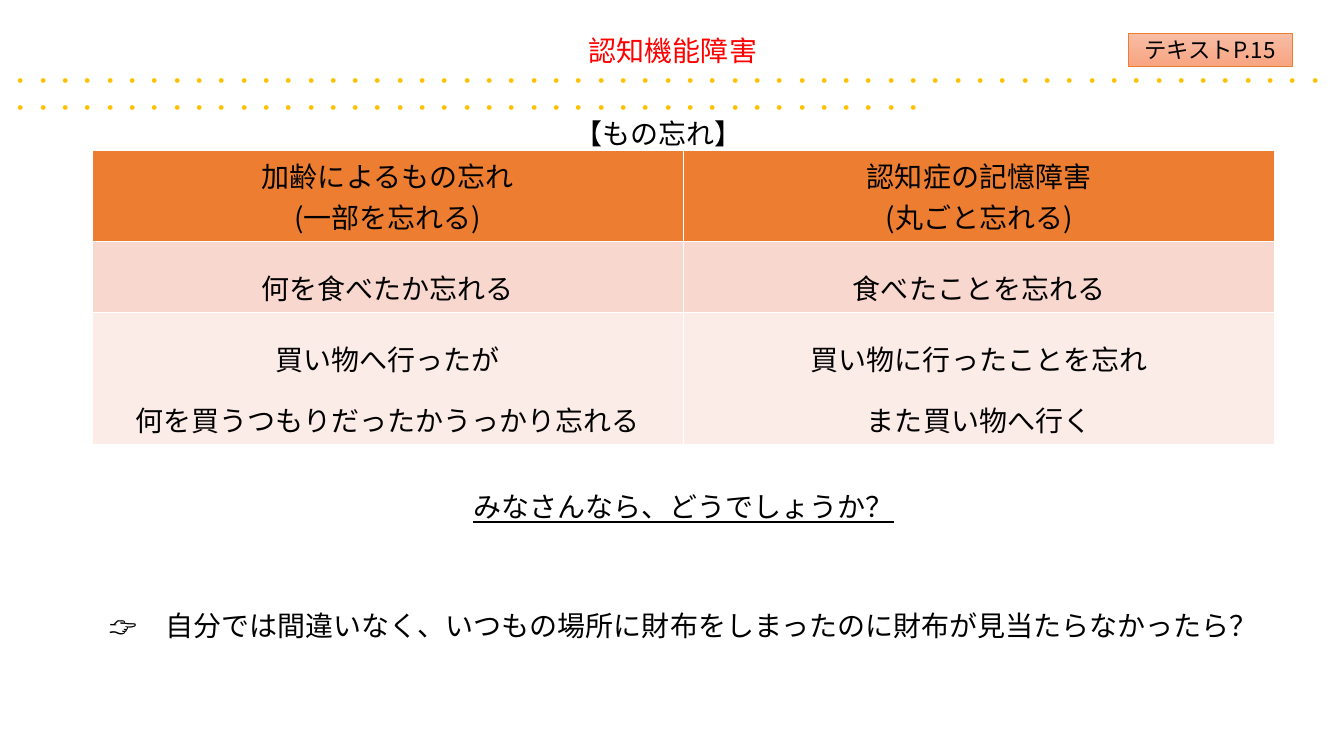
from lxml.etree import SubElement
from pptx import Presentation
from pptx.dml.color import RGBColor
from pptx.enum.shapes import MSO_SHAPE
from pptx.enum.text import MSO_ANCHOR, MSO_AUTO_SIZE, PP_ALIGN
from pptx.oxml.ns import qn
from pptx.util import Emu, Pt

PX_PER_INCH = 100.8
FONT = "Noto Sans CJK JP"
BLACK = RGBColor(0x00, 0x00, 0x00)
RED = RGBColor(0xFF, 0x00, 0x00)
GOLD = RGBColor(0xFF, 0xC0, 0x00)
ORANGE = RGBColor(0xED, 0x7D, 0x31)
PEACH = RGBColor(0xF8, 0xD7, 0xCE)
PALE = RGBColor(0xFC, 0xEC, 0xE8)
BADGE_TOP = RGBColor(0xF7, 0xBD, 0xA5)
BADGE_BOTTOM = RGBColor(0xF8, 0xA5, 0x82)

# fill, line spacing, row height, lines of the left and right cells
ROWS = [
    (ORANGE, 1.0, 91, (["加齢によるもの忘れ", "(一部を忘れる)"],
                       ["認知症の記憶障害", "(丸ごと忘れる)"])),
    (PEACH, 1.5, 71, (["何を食べたか忘れる"], ["食べたことを忘れる"])),
    (PALE, 1.5, 131, (["買い物へ行ったが", "何を買うつもりだったかうっかり忘れる"],
                      ["買い物に行ったことを忘れ", "また買い物へ行く"])),
]


def px(n):
    return Emu(round(n * 914400 / PX_PER_INCH))


def box_px(*box):
    return [px(n) for n in box]


def fill_text(tf, lines, size=20, color=BLACK, align=PP_ALIGN.CENTER, spacing=1.0):
    """Write one paragraph per line and return the paragraphs."""
    tf.word_wrap = True
    for i, line in enumerate(lines):
        p = tf.paragraphs[0] if i == 0 else tf.add_paragraph()
        p.text = line
        p.alignment = align
        p.line_spacing = spacing
        p.space_before = Pt(0)
        p.font.size = Pt(size)
        p.font.bold = False
        p.font.color.rgb = color
        p.font.name = FONT
        SubElement(p._p.pPr.find(qn("a:defRPr")), qn("a:ea"), typeface=FONT)
    return tf.paragraphs


def clear_margins(tf):
    tf.margin_left = tf.margin_top = tf.margin_right = tf.margin_bottom = 0


def add_text(slide, box, lines, **style):
    tf = slide.shapes.add_textbox(*box_px(*box)).text_frame
    clear_margins(tf)
    return fill_text(tf, lines, **style)


def add_header(slide, left, top, width):
    title = slide.shapes.title
    title.left, title.top, title.width, title.height = box_px(left, top, width, 40)
    tf = title.text_frame
    clear_margins(tf)
    tf.auto_size = MSO_AUTO_SIZE.NONE
    tf.vertical_anchor = MSO_ANCHOR.MIDDLE
    fill_text(tf, ["認知機能障害"], color=RED)
    add_text(slide, (left + 10, top + 37, width - 16, 54), ["・" * 100],
             size=16, color=GOLD, align=PP_ALIGN.LEFT, spacing=Pt(19.3))
    add_text(slide, (left, top + 87, width - 28, 40), ["【もの忘れ】"])


def add_comparison(slide, left, top, width):
    height = sum(row[2] for row in ROWS)
    table = slide.shapes.add_table(len(ROWS), 2, *box_px(left, top, width, height)).table
    for row, (color, spacing, row_height, texts) in zip(table.rows, ROWS):
        row.height = px(row_height)
        for cell, lines in zip(row.cells, texts):
            cell.fill.solid()
            cell.fill.fore_color.rgb = color
            fill_text(cell.text_frame, lines, spacing=spacing)


def add_questions(slide, left, top, width):
    lead, question = add_text(slide, (left, top, width, 191), [
        "みなさんなら、どうでしょうか？",
        "👉　自分では間違いなく、いつもの場所に財布をしまったのに財布が見当たらなかったら？",
    ], spacing=1.5)
    lead.font.underline = True
    question.space_before = px(68)


def add_page_badge(slide, left, top, width, height):
    sp = slide.shapes.add_shape(MSO_SHAPE.RECTANGLE, *box_px(left, top, width, height))
    sp.shadow.inherit = False
    sp.fill.gradient()
    sp.fill.gradient_angle = 270
    for stop, color in zip(sp.fill.gradient_stops, (BADGE_TOP, BADGE_BOTTOM)):
        stop.color.rgb = color
    sp.line.color.rgb = ORANGE
    sp.line.width = Pt(0.5)
    tf = sp.text_frame
    clear_margins(tf)
    tf.vertical_anchor = MSO_ANCHOR.MIDDLE
    fill_text(tf, ["テキストP.15"], size=16)


def main():
    prs = Presentation()
    prs.slide_width, prs.slide_height = box_px(1344, 756)
    slide = prs.slides.add_slide(prs.slide_layouts[5])
    add_comparison(slide, 92, 150, 1183)
    add_header(slide, 0, 30, 1346)
    add_questions(slide, 92, 473, 1183)
    add_page_badge(slide, 1128, 33, 164, 33)
    prs.save("out.pptx")


if __name__ == "__main__":
    main()
